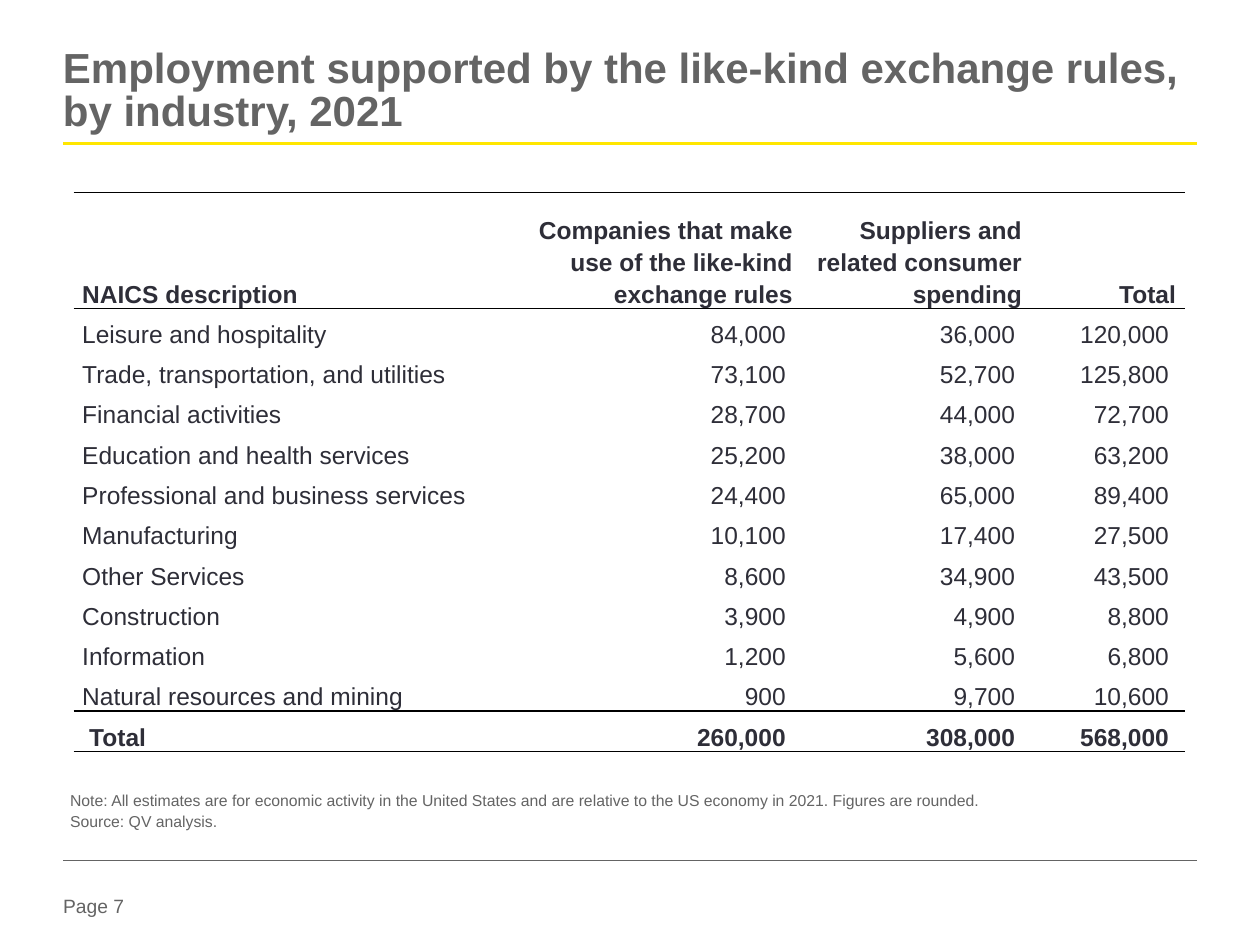
from dataclasses import dataclass
from lxml.etree import SubElement as Sub
from pptx import Presentation
from pptx.dml.color import RGBColor as RGB
from pptx.enum.shapes import MSO_CONNECTOR as Conn
from pptx.enum.text import MSO_ANCHOR as Anchor, PP_ALIGN as Align
from pptx.oxml.ns import qn
from pptx.util import Pt


@dataclass(frozen=True)
class Theme:
    """Colours, type sizes and font of the slide."""
    font: str = "Arial"
    gray: str = "646464"
    ink: str = "2E2E38"
    gold: str = "FFE600"
    black: str = "000000"
    title: int = 24
    body: int = 14
    page: int = 11
    note: int = 9


THEME = Theme()
HEAD = ("NAICS description", "Companies that make use of the like-kind exchange rules",
        "Suppliers and related consumer spending", "Total")
ROWS = (
    ("Leisure and hospitality", 84000, 36000, 120000),
    ("Trade, transportation, and utilities", 73100, 52700, 125800),
    ("Financial activities", 28700, 44000, 72700),
    ("Education and health services", 25200, 38000, 63200),
    ("Professional and business services", 24400, 65000, 89400),
    ("Manufacturing", 10100, 17400, 27500),
    ("Other Services", 8600, 34900, 43500),
    ("Construction", 3900, 4900, 8800),
    ("Information", 1200, 5600, 6800),
    ("Natural resources and mining", 900, 9700, 10600),
    ("Total", 260000, 308000, 568000),
)
NOTES = ("Note: All estimates are for economic activity in the United States and are "
         "relative to the US economy in 2021. Figures are rounded.",
         "Source: QV analysis.")


def apply(item, values):
    """Set each named attribute of an item."""
    for name, value in values.items():
        setattr(item, name, value)


def write(para, text, size, color, bold=False, align=Align.LEFT, space=1.0):
    """Fill a paragraph with styled text."""
    run = para.add_run()
    run.text = text
    apply(para, {"alignment": align, "line_spacing": space})
    apply(run.font, {"name": THEME.font, "size": Pt(size), "bold": bold})
    run.font.color.rgb = RGB.from_string(color)


def add_text(slide, box, lines, size, pad=(0, 0), **style):
    """Place a gray text box with one paragraph per line."""
    frame = slide.shapes.add_textbox(*map(Pt, box)).text_frame
    side, edge = map(Pt, pad)
    apply(frame, {"word_wrap": True, "margin_left": side, "margin_right": side,
                  "margin_top": edge, "margin_bottom": edge})
    for i, line in enumerate(lines):
        para = frame.add_paragraph() if i else frame.paragraphs[0]
        write(para, line, size, THEME.gray, **style)


def add_rule(slide, left, top, width, color, weight):
    """Draw a horizontal rule."""
    rule = slide.shapes.add_connector(Conn.STRAIGHT, Pt(left), Pt(top), Pt(left + width), Pt(top))
    rule.line.color.rgb = RGB.from_string(color)
    rule.line.width = Pt(weight)
    Sub(rule._element.spPr, qn("a:effectLst"))


def add_edges(cell, lined):
    """Line the named sides of a cell and clear the rest."""
    props = cell._tc.get_or_add_tcPr()
    for side in "LRTB":
        edge = Sub(props, qn(f"a:ln{side}"), w=str(Pt(1)))
        if side in lined:
            fill = Sub(edge, qn("a:solidFill"))
            Sub(fill, qn("a:srgbClr"), val=THEME.black)
        else:
            Sub(edge, qn("a:noFill"))


def add_header(slide, box):
    """Place the title and the rule below it."""
    left, top, width, height = box
    add_text(slide, (left, top, width - 6, 50),
             ["Employment supported by the like-kind exchange rules, by industry, 2021"],
             THEME.title, bold=True, space=0.85)
    add_rule(slide, left, top + height, width, THEME.gold, 1.5)


def add_jobs(slide, box):
    """Place the table of jobs by industry."""
    left, top, width, height = box
    last, tall = len(ROWS), 66.24
    frame = slide.shapes.add_table(last + 1, len(HEAD), *map(Pt, box))
    table = frame.table
    apply(table, {"first_row": False, "horz_banding": False})
    for col, share in zip(table.columns, (238, 178, 131, 88)):
        col.width = Pt(share * width / 635)
    for r, (row, values) in enumerate(zip(table.rows, (HEAD, *ROWS))):
        row.height = Pt((height - tall) / last if r else tall)
        lined = {0: "TB", 1: "T", last - 1: "B", last: "TB"}.get(r, "")
        for c, (cell, value) in enumerate(zip(row.cells, values)):
            left_pad = 9 if r == last and c == 0 else 5
            right_pad = 9 if r and c else 5
            apply(cell, {"margin_left": Pt(left_pad), "margin_right": Pt(right_pad),
                         "margin_top": 0, "margin_bottom": 0,
                         "vertical_anchor": Anchor.BOTTOM})
            add_edges(cell, lined)
            cell.fill.background()
            text = f"{value:,}" if isinstance(value, int) else value
            write(cell.text_frame.paragraphs[0], text, THEME.body, THEME.ink,
                  r in (0, last), Align.RIGHT if c else Align.LEFT, 1.15)


def add_footer(slide, box):
    """Place the bottom rule and the page number."""
    left, top, width, height = box
    add_rule(slide, left, top, width, THEME.gray, 0.25)
    add_text(slide, (left, top + height - 16, 57, 16), ["Page 7"], THEME.page)


def main():
    """Build and save the slide."""
    deck = Presentation()
    apply(deck, {"slide_width": Pt(720), "slide_height": Pt(540)})
    slide = deck.slides.add_slide(deck.slide_layouts[6])
    add_header(slide, (36, 28, 648, 54))
    add_jobs(slide, (42, 110, 635, 319.7))
    add_text(slide, (33, 446.5, 648, 31), NOTES, THEME.note, (7.2, 3.6),
             align=Align.JUSTIFY, space=1.15)
    add_footer(slide, (36, 491.5, 648, 35.5))
    deck.save("out.pptx")


if __name__ == "__main__":
    main()
